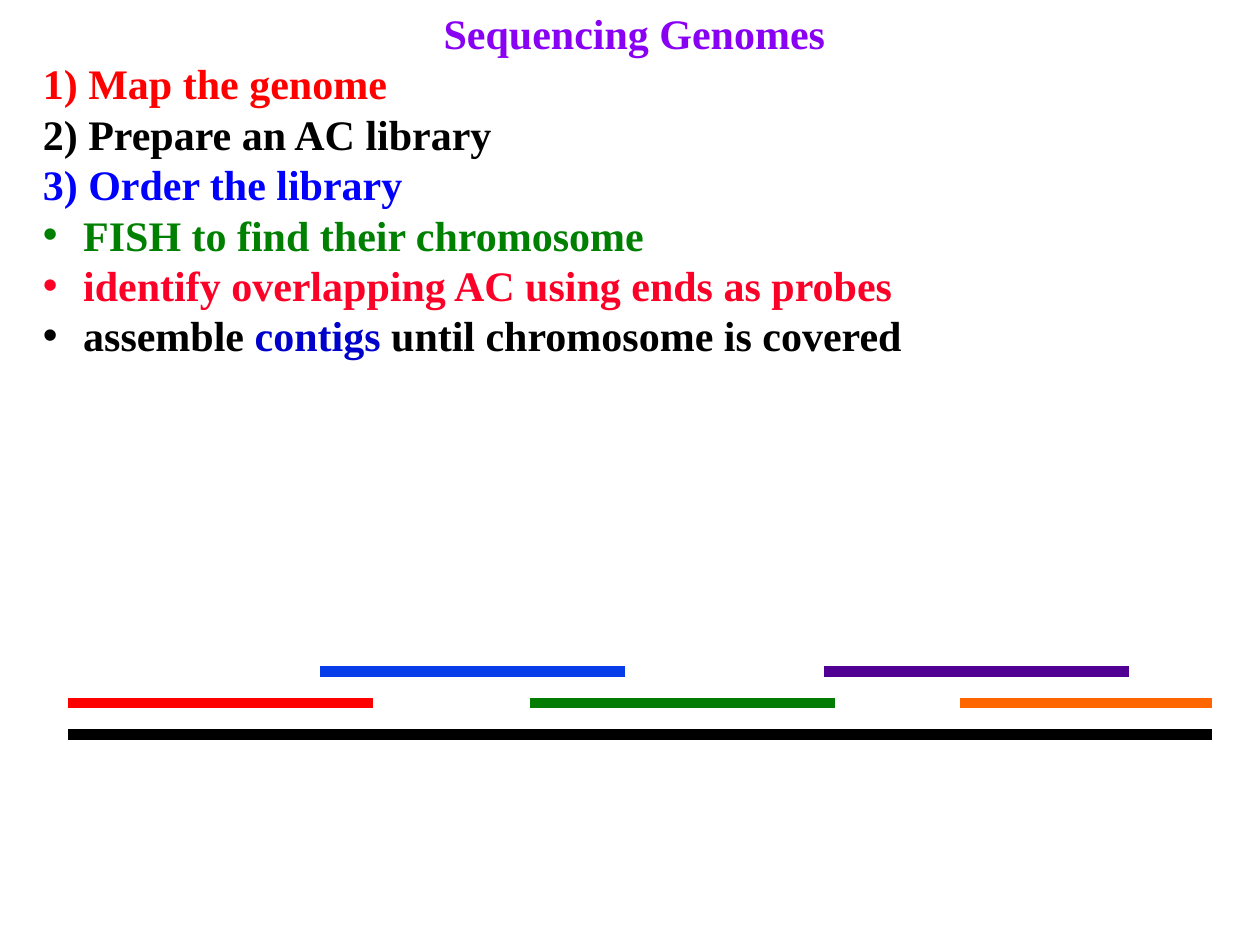
import dataclasses

import pptx
import pptx.dml.color
import pptx.enum.shapes
import pptx.enum.text
import pptx.oxml.ns
import pptx.util
from lxml import etree

Inches = pptx.util.Inches
Pt = pptx.util.Pt


@dataclasses.dataclass(frozen=True)
class Theme:
    """Colours, font and sizes of the slide."""
    font: str = "Times New Roman"
    text_size: float = 24
    line_pitch: float = 28.8
    bar_width: float = 6
    title: str = "8901F3"
    black: str = "000000"
    red: str = "FF0000"
    blue: str = "0000FF"
    green: str = "008000"
    crimson: str = "FC0128"
    navy: str = "0000CC"
    clone_blue: str = "063DE8"
    clone_green: str = "037C03"
    clone_purple: str = "500093"
    clone_orange: str = "FF6600"


THEME = Theme()
HANGING = 0.32

STEPS = [
    (False, [("1) Map the genome", THEME.red)]),
    (False, [("2) Prepare an AC library", THEME.black)]),
    (False, [("3) Order the library", THEME.blue)]),
    (True, [("FISH to find their chromosome", THEME.green)]),
    (True, [("identify overlapping AC using ends as probes", THEME.crimson)]),
    (True, [("assemble ", THEME.black), ("contigs", THEME.navy),
            (" until chromosome is covered", THEME.black)]),
]

CLONES = [
    (0, 2.42, 1, THEME.red),
    (2, 2.42, 2, THEME.clone_blue),
    (3.67, 2.42, 1, THEME.clone_green),
    (6, 2.42, 2, THEME.clone_purple),
    (7.08, 2, 1, THEME.clone_orange),
]


def add_text(paragraph, text, color, size=THEME.text_size, bold=True):
    """Append a formatted run to a paragraph."""
    run = paragraph.add_run()
    run.text = text
    run.font.name = THEME.font
    run.font.size = Pt(size)
    run.font.bold = bold
    run.font.color.rgb = pptx.dml.color.RGBColor.from_string(color)


def format_paragraph(paragraph, alignment=pptx.enum.text.PP_ALIGN.LEFT):
    """Set alignment and even line pitch."""
    paragraph.alignment = alignment
    paragraph.space_before = paragraph.space_after = Pt(0)
    paragraph.line_spacing = Pt(THEME.line_pitch)


def set_bullet(paragraph, bulleted):
    """Give a paragraph a hanging bullet or none."""
    properties = paragraph._p.get_or_add_pPr()
    indent = Inches(HANGING) if bulleted else 0
    properties.set("marL", str(indent))
    properties.set("indent", str(-indent))
    tag = "a:buChar" if bulleted else "a:buNone"
    bullet = etree.SubElement(properties, pptx.oxml.ns.qn(tag))
    if bulleted:
        bullet.set("char", "•")


def place_placeholder(shape, left, top, width, height):
    """Move a placeholder and return its cleared text frame."""
    shape.left, shape.top = Inches(left), Inches(top)
    shape.width, shape.height = Inches(width), Inches(height)
    frame = shape.text_frame
    frame.word_wrap = True
    frame.auto_size = pptx.enum.text.MSO_AUTO_SIZE.NONE
    frame.vertical_anchor = pptx.enum.text.MSO_ANCHOR.TOP
    frame.margin_left = frame.margin_right = Inches(0.1)
    frame.margin_top = frame.margin_bottom = 0
    return frame


def build_title(slide, left, top, width, height):
    """Fill the title placeholder."""
    frame = place_placeholder(slide.shapes.title, left, top, width, height)
    paragraph = frame.paragraphs[0]
    format_paragraph(paragraph, pptx.enum.text.PP_ALIGN.CENTER)
    add_text(paragraph, "Sequencing Genomes", THEME.title)


def build_steps(slide, left, top, width, height):
    """Fill the body placeholder with the sequencing steps."""
    frame = place_placeholder(slide.placeholders[1], left, top, width, height)
    for index, (bulleted, parts) in enumerate(STEPS):
        paragraph = frame.add_paragraph() if index else frame.paragraphs[0]
        format_paragraph(paragraph)
        set_bullet(paragraph, bulleted)
        for text, color in parts:
            add_text(paragraph, text, color)


def add_bar(slide, left, top, width, color):
    """Draw one thick horizontal line."""
    bar = slide.shapes.add_connector(
        pptx.enum.shapes.MSO_CONNECTOR.STRAIGHT,
        Inches(left), Inches(top), Inches(left + width), Inches(top))
    bar.line.width = Pt(THEME.bar_width)
    bar.line.color.rgb = pptx.dml.color.RGBColor.from_string(color)
    etree.SubElement(bar._element.spPr, pptx.oxml.ns.qn("a:effectLst"))


def build_contig_map(slide, left, top, width, height):
    """Draw overlapping clones in two rows above the chromosome."""
    bottom = top + height
    add_bar(slide, left, bottom, width, THEME.black)
    for offset, length, row, color in CLONES:
        add_bar(slide, left + offset, bottom - row * height / 2, length, color)


def main():
    """Build and save the slide."""
    presentation = pptx.Presentation()
    presentation.slide_width = Inches(10)
    presentation.slide_height = Inches(7.5)
    slide = presentation.slides.add_slide(presentation.slide_layouts[1])
    build_title(slide, 0.24, 0.06, 9.59, 0.4)
    build_steps(slide, 0.24, 0.46, 9.59, 2.47)
    build_contig_map(slide, 0.54, 5.33, 9.08, 0.5)
    presentation.save("out.pptx")


if __name__ == "__main__":
    main()
